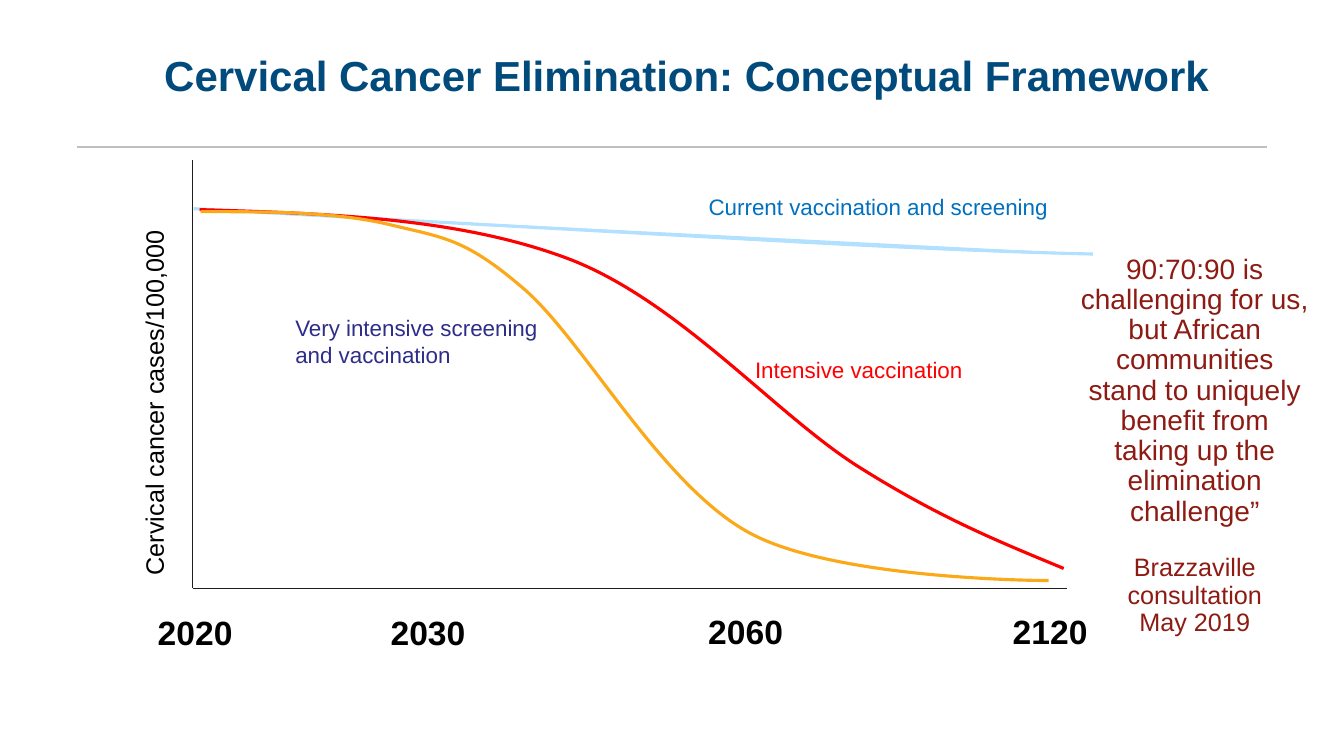
from lxml import etree
from pptx import Presentation
from pptx.dml.color import RGBColor
from pptx.enum.shapes import MSO_CONNECTOR
from pptx.enum.text import MSO_ANCHOR, PP_ALIGN
from pptx.oxml.ns import qn
from pptx.util import Inches, Pt

COLORS = {
    "title": "004A7C",
    "rule": "BFBFBF",
    "axis": "1E1E1E",
    "text": "000000",
    "current": "B2E0FF",
    "current_label": "0070C0",
    "intensive": "FF0000",
    "very_intensive": "FBA919",
    "very_intensive_label": "2D2D8A",
    "quote": "8D1B13",
}


class FrameworkSlide:
    font = "Arial"

    def __init__(self, presentation):
        self.shapes = presentation.slides.add_slide(presentation.slide_layouts[6]).shapes

    def color(self, name):
        return RGBColor.from_string(COLORS[name])

    def line(self, start, end, color, width):
        rule = self.shapes.add_connector(
            MSO_CONNECTOR.STRAIGHT, *(Inches(v) for v in (*start, *end)))
        rule.line.color.rgb = self.color(color)
        rule.line.width = Pt(width)
        etree.SubElement(rule._element.spPr, qn("a:effectLst"))

    def curve(self, start, segments, color, filled=False):
        builder = self.shapes.build_freeform(*(Inches(v) for v in start), scale=1.0)
        builder.add_line_segments(
            [(Inches(x), Inches(y)) for segment in segments for x, y in segment],
            close=False)
        trend = builder.convert_to_shape()
        steps = iter(list(trend._element.iter(qn("a:lnTo"))))
        for segment in segments:
            handles = [next(steps) for _ in segment]
            if len(handles) == 3:
                cubic = etree.Element(qn("a:cubicBezTo"))
                handles[0].addprevious(cubic)
                for handle in handles:
                    cubic.append(handle[0])
                    handle.getparent().remove(handle)
        trend.shadow.inherit = False
        if filled:
            trend.fill.solid()
            trend.fill.fore_color.rgb = self.color(color)
        else:
            trend.fill.background()
        trend.line.color.rgb = self.color(color)
        trend.line.width = Pt(2.25)

    def text(self, box, words, size, color, bold=False, align=PP_ALIGN.LEFT):
        label = self.shapes.add_textbox(*(Inches(v) for v in box))
        frame = label.text_frame
        frame.word_wrap = True
        frame.text = words
        for paragraph in frame.paragraphs:
            paragraph.alignment = align
            for run in paragraph.runs:
                run.font.name = self.font
                run.font.size = Pt(size)
                run.font.bold = bold
                run.font.color.rgb = self.color(color)
        return label

    def title(self, box, words):
        frame = self.text(box, words, 30, "title", bold=True).text_frame
        frame.vertical_anchor = MSO_ANCHOR.MIDDLE
        frame.margin_bottom = Inches(0.24)
        frame.paragraphs[0].line_spacing = 0.9

    def quote(self, box, words, source_size):
        frame = self.text(box, words, 20, "quote", align=PP_ALIGN.CENTER).text_frame
        statement, source = frame.paragraphs
        for paragraph in (statement, source):
            paragraph.line_spacing = 0.9
            paragraph.space_after = Pt(10)
        source.space_before = Pt(10)
        for run in source.runs:
            run.font.size = Pt(source_size)


def main():
    presentation = Presentation()
    presentation.slide_width = Inches(13.33)
    presentation.slide_height = Inches(7.5)
    slide = FrameworkSlide(presentation)

    slide.line((0.76, 1.46), (12.57, 1.46), "rule", 1.5)
    slide.title((1.53, 0.19, 10.68, 1.35),
                "Cervical Cancer Elimination: Conceptual Framework")

    slide.line((1.91, 1.59), (1.91, 5.83), "axis", 1)
    slide.line((1.91, 5.84), (10.58, 5.84), "axis", 1)

    slide.curve((1.92, 2.07), [
        ((7.92, 2.4),),
        ((9.41, 2.48), (10.37, 2.51), (10.84, 2.52)),
    ], "current", filled=True)

    for year, left, top in (("2020", 1.06, 6.02), ("2030", 3.37, 6.02),
                            ("2060", 6.52, 6.01), ("2120", 9.54, 6.01)):
        slide.text((left, top, 1.75, 0.5), year, 24, "text",
                   bold=True, align=PP_ALIGN.CENTER)

    axis_title = slide.text((-0.5, 3.58, 4.05, 0.4),
                            "Cervical cancer cases/100,000", 18, "text")
    axis_title.rotation = 270

    for box, words, color in (
        ((6.93, 1.87, 3.69, 0.37), "Current vaccination and screening", "current_label"),
        ((7.39, 3.48, 3.84, 0.37), "Intensive vaccination", "intensive"),
        ((2.83, 3.07, 2.92, 0.64), "Very intensive screening and vaccination",
         "very_intensive_label"),
    ):
        slide.text(box, words, 16, color)

    slide.curve((1.98, 2.08), [
        ((3.28, 2.12), (4.58, 2.16), (5.67, 2.58)),
        ((6.76, 3.01), (7.71, 4.13), (8.53, 4.64)),
        ((9.34, 5.15), (9.95, 5.39), (10.55, 5.64)),
    ], "intensive")
    slide.curve((1.99, 2.1), [
        ((2.66, 2.1), (3.33, 2.1), (3.87, 2.23)),
        ((4.4, 2.36), (4.61, 2.36), (5.2, 2.87)),
        ((5.79, 3.38), (6.55, 4.8), (7.42, 5.28)),
        ((8.28, 5.76), (10.4, 5.76), (10.4, 5.76)),
    ], "very_intensive")

    slide.quote(
        (10.61, 2.48, 2.48, 3.69),
        "90:70:90 is challenging for us, but African communities stand to uniquely "
        "benefit from taking up the elimination challenge”\n"
        "Brazzaville consultation\vMay 2019",
        18,
    )
    presentation.save("out.pptx")


if __name__ == "__main__":
    main()
